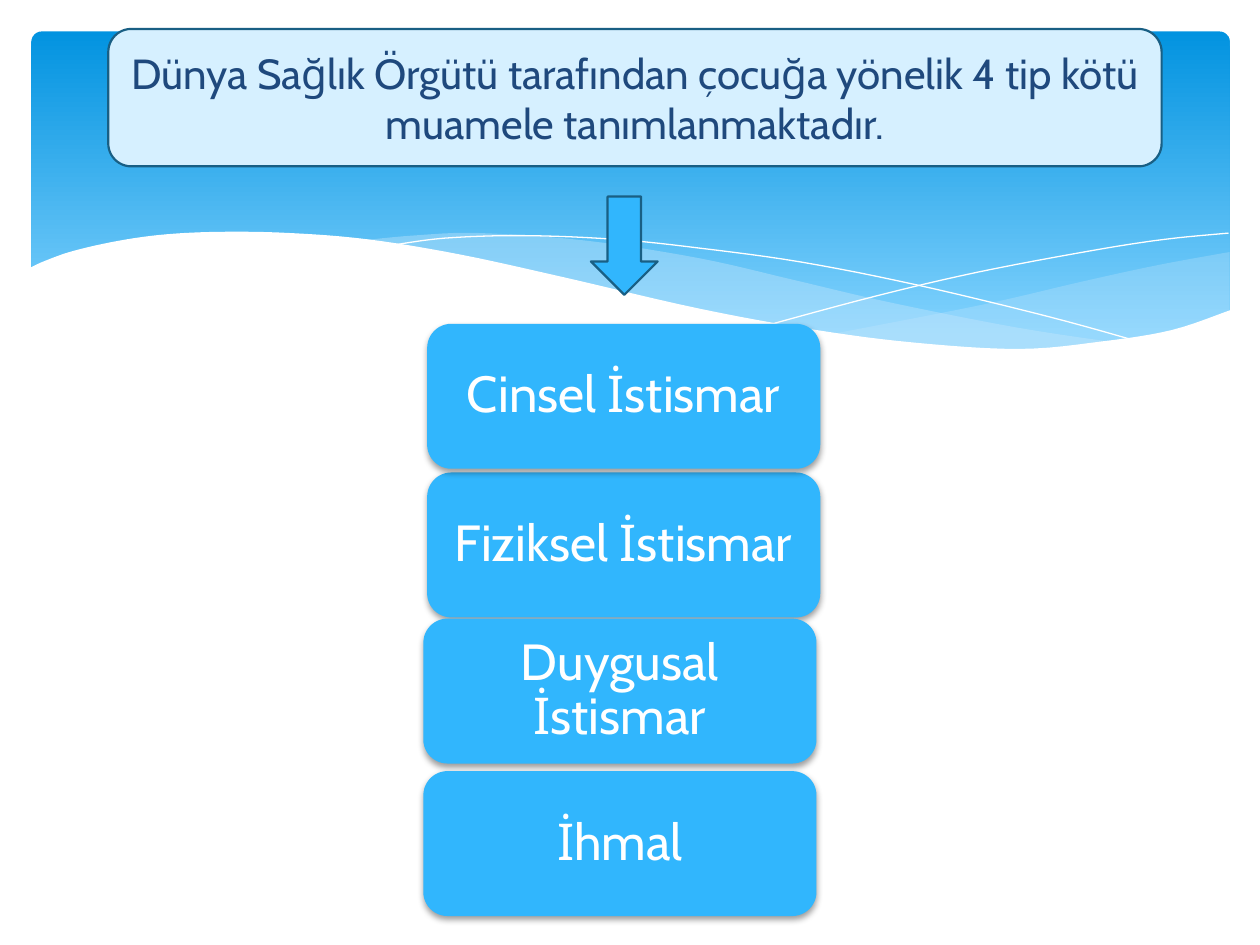
from lxml.etree import SubElement
from pptx import Presentation
from pptx.dml.color import RGBColor
from pptx.enum.shapes import MSO_SHAPE
from pptx.enum.text import MSO_ANCHOR, PP_ALIGN
from pptx.oxml.ns import qn
from pptx.util import Inches, Pt

COLORS = {
    "sky_top": "0293E0",
    "sky_bottom": "83D3FE",
    "haze": "C6E7FC",
    "white": "FFFFFF",
    "card": "31B6FD",
    "outline": "195F84",
    "header": "D6F0FF",
    "header_text": "1F497D",
    "shadow": "000000",
}
FONT = "Cabin"
CELL = Inches(0.1)
COLUMNS, ROWS = 100, 75
CARD_COLUMNS, CARD_ROWS = 31.2, 11.5
CURVE_STEPS = 6

CARDS = [
    ("Fiziksel İstismar", 33.9, 37.5),
    ("Cinsel İstismar", 33.9, 25.7),
    ("Duygusal İstismar", 33.6, 49.1),
    ("İhmal", 33.6, 61.2),
]

RIGHT_HAZE = (
    [(97.6, 20), (92.1, 21), (86.1, 22.3), (77.9, 24.2), (66.1, 26.5)],
    [(66.1, 26.5), (73.2, 27.4), (80.3, 27.8), (87.2, 27.4), (92.8, 26.3), (97.6, 24.7)],
)
MIDDLE_HAZE = (
    [(89.3, 27.3), (80.7, 26), (70.6, 24), (62.9, 22.2), (55.5, 20.5),
     (46.5, 19.1), (38, 18.5), (32.8, 18.7), (28.6, 19.1)],
    [(28.6, 19.1), (36.2, 20.3), (44.9, 22.2), (56.6, 24.8), (66.5, 26.6),
     (74.8, 27.6), (81.8, 27.8), (89.3, 27.3)],
)
WHITE_LINES = [
    [(30.9, 19.5), (35.3, 18.9), (41.6, 18.7), (48.9, 19), (55.6, 19.7),
     (63.6, 20.8), (72.7, 22.6), (83.1, 25.1), (90.7, 27.2)],
    [(61.3, 25.7), (69.5, 23.5), (77.6, 21.6), (86.6, 19.9), (92.4, 19), (97.5, 18.5)],
]
WHITE_WAVE = (
    [(97.7, 24.6), (93, 26.2), (87.5, 27.1), (80.9, 27.7), (72.6, 27.2),
     (64.8, 26.2), (55.5, 24.5), (44.7, 22), (36.5, 20.2), (29.2, 19),
     (23, 18.5), (17.7, 18.4), (13.2, 18.6), (9.5, 19.1), (5.9, 19.9),
     (3.6, 20.7), (2.3, 21.3)],
    [(2.3, 32.9), (97.7, 32.9)],
)


def color(name):
    return RGBColor.from_string(COLORS[name])


def grid(*cells):
    return [round(cell * CELL) for cell in cells]


def smooth(knots):
    if len(knots) < 3:
        return knots
    padded = [knots[0], *knots, knots[-1]]
    points = [knots[0]]
    for a, b, c, d in zip(padded, padded[1:], padded[2:], padded[3:]):
        for step in range(1, CURVE_STEPS + 1):
            t = step / CURVE_STEPS
            points.append(tuple(
                (2 * q + (r - p) * t + (2 * p - 5 * q + 4 * r - s) * t ** 2
                 + (3 * q - p - 3 * r + s) * t ** 3) / 2
                for p, q, r, s in zip(a, b, c, d)
            ))
    return points


def add_curve(slide, edges, closed):
    points = [grid(*point) for edge in edges for point in smooth(edge)]
    builder = slide.shapes.build_freeform(*points[0])
    builder.add_line_segments(points[1:], close=closed)
    curve = builder.convert_to_shape()
    curve.shadow.inherit = False
    return curve


def add_wave(slide, edges, fill, opacity=100):
    wave = add_curve(slide, edges, True)
    wave.fill.solid()
    wave.fill.fore_color.rgb = color(fill)
    wave.line.fill.background()
    if opacity < 100:
        tint = wave.element.spPr.find(qn("a:solidFill")).find(qn("a:srgbClr"))
        SubElement(tint, qn("a:alpha"), val=str(opacity * 1000))


def add_white_line(slide, knots):
    curve = add_curve(slide, [knots], False)
    curve.fill.background()
    curve.line.color.rgb = color("white")
    curve.line.width = Pt(0)


def add_block(slide, kind, cells, fill, outline=None):
    block = slide.shapes.add_shape(kind, *grid(*cells))
    block.shadow.inherit = False
    block.fill.solid()
    block.fill.fore_color.rgb = color(fill)
    if outline:
        block.line.color.rgb = color(outline)
        block.line.width = Pt(1.25)
    else:
        block.line.fill.background()
    return block


def add_sky(slide):
    sky = add_block(slide, MSO_SHAPE.ROUNDED_RECTANGLE, (2.5, 2.5, 95.1, 27), "sky_top")
    sky.adjustments[0] = 0.03
    sky.fill.gradient()
    sky.fill.gradient_angle = 270
    stops = zip(sky.fill.gradient_stops, ("sky_top", "sky_bottom"), (0, 0.9))
    for stop, name, position in stops:
        stop.color.rgb = color(name)
        stop.position = position


def write(block, text, size, text_color):
    frame = block.text_frame
    frame.word_wrap = True
    frame.vertical_anchor = MSO_ANCHOR.MIDDLE
    frame.text = text
    para = frame.paragraphs[0]
    para.alignment = PP_ALIGN.CENTER
    span = para.runs[0]
    span.font.name = FONT
    span.font.size = Pt(size)
    span.font.color.rgb = color(text_color)
    return frame


def add_shadow(block):
    effects = block.element.spPr.find(qn("a:effectLst"))
    shadow = SubElement(effects, qn("a:outerShdw"), blurRad=str(Pt(4)),
                        dist=str(Pt(2)), dir="5400000", rotWithShape="0")
    tint = SubElement(shadow, qn("a:srgbClr"), val=COLORS["shadow"])
    SubElement(tint, qn("a:alpha"), val="38000")


def add_card(slide, text, column, row):
    card = add_block(slide, MSO_SHAPE.ROUNDED_RECTANGLE,
                     (column, row, CARD_COLUMNS, CARD_ROWS), "card")
    add_shadow(card)
    frame = write(card, text, 29, "white")
    frame.margin_left = frame.margin_right = Inches(0.12)
    frame.margin_top = frame.margin_bottom = Inches(0.06)
    frame.paragraphs[0].line_spacing = 0.9


def main():
    deck = Presentation()
    deck.slide_width, deck.slide_height = grid(COLUMNS, ROWS)
    page = deck.slides.add_slide(deck.slide_layouts[6])
    add_sky(page)
    add_wave(page, RIGHT_HAZE, "haze", 29)
    add_wave(page, MIDDLE_HAZE, "haze", 40)
    for knots in WHITE_LINES:
        add_white_line(page, knots)
    add_wave(page, WHITE_WAVE, "white")
    for card in CARDS:
        add_card(page, *card)
    add_block(page, MSO_SHAPE.DOWN_ARROW, (46.9, 15.6, 5.3, 7.8), "card", "outline")
    header = add_block(page, MSO_SHAPE.ROUNDED_RECTANGLE,
                       (8.6, 2.3, 83.6, 10.9), "header", "outline")
    write(header, "Dünya Sağlık Örgütü tarafından çocuğa yönelik 4 tip kötü "
          "muamele tanımlanmaktadır.", 24, "header_text")
    deck.save("out.pptx")


if __name__ == "__main__":
    main()
